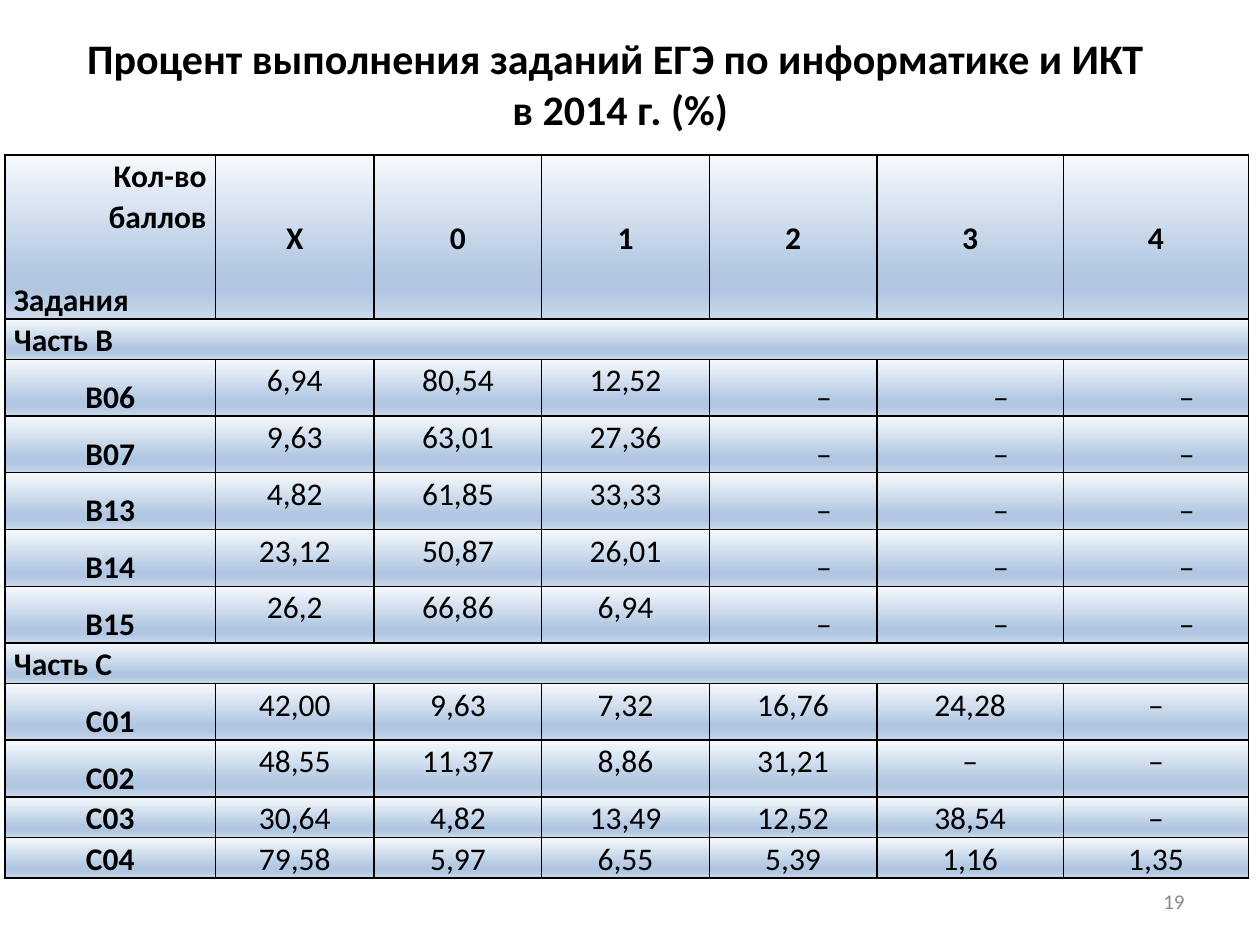
from lxml.etree import SubElement
from pptx import Presentation
from pptx.dml.color import RGBColor
from pptx.enum.text import MSO_ANCHOR as Anchor, PP_ALIGN as Align
from pptx.oxml.ns import qn
from pptx.util import Inches, Pt

BLACK = RGBColor(0x00, 0x00, 0x00)
GREY = RGBColor(0x89, 0x89, 0x89)
PALE = RGBColor(0xF6, 0xF9, 0xFC)
BLUE = RGBColor(0xB0, 0xC6, 0xE1)
LIGHT = RGBColor(0xCA, 0xD9, 0xEB)
GRADIENT = [(0, PALE), (74, BLUE), (83, BLUE), (100, LIGHT)]
FONT = "Calibri"

TITLE = "Процент выполнения заданий ЕГЭ по информатике и ИКТ\v в 2014 г. (%)"
PAGE_NUMBER = "19"
CORNER = ["Кол-во", "баллов", "Задания"]
SCORES = ["Х", "0", "1", "2", "3", "4"]
PARTS = [
    ("Часть В", [
        ("В06", "6,94", "80,54", "12,52", "–", "–", "–"),
        ("В07", "9,63", "63,01", "27,36", "–", "–", "–"),
        ("В13", "4,82", "61,85", "33,33", "–", "–", "–"),
        ("В14", "23,12", "50,87", "26,01", "–", "–", "–"),
        ("В15", "26,2", "66,86", "6,94", "–", "–", "–"),
    ]),
    ("Часть С", [
        ("С01", "42,00", "9,63", "7,32", "16,76", "24,28", "–"),
        ("С02", "48,55", "11,37", "8,86", "31,21", "–", "–"),
        ("С03", "30,64", "4,82", "13,49", "12,52", "38,54", "–"),
        ("С04", "79,58", "5,97", "6,55", "5,39", "1,16", "1,35"),
    ]),
]
COMPACT_TASKS = {"С03", "С04"}
COLUMN_WIDTHS = [1.67, 1.26, 1.33, 1.33, 1.33, 1.48, 1.47]
HEADER_HEIGHT, COMPACT_HEIGHT, TASK_HEIGHT = 1.3, 0.32, 0.45
SINGLE, WIDE = 1.07, 1.5
DASH_INDENT = Inches(0.49)
CORNER_GAP = Pt(23.5)


def format_paragraph(paragraph, size, color=BLACK, bold=False, align=Align.CENTER):
    paragraph.alignment = align
    for run in paragraph.runs:
        run.font.name, run.font.size = FONT, Pt(size)
        run.font.bold, run.font.color.rgb = bold, color


def add_color(parent, color):
    SubElement(SubElement(parent, qn("a:solidFill")), qn("a:srgbClr"), val=str(color))


def paint_cell(cell):
    properties = cell._tc.get_or_add_tcPr()
    for side in ("lnL", "lnR", "lnT", "lnB"):
        add_color(SubElement(properties, qn(f"a:{side}"), w=str(Pt(1))), BLACK)
    gradient = SubElement(properties, qn("a:gradFill"), rotWithShape="1")
    stops = SubElement(gradient, qn("a:gsLst"))
    for share, color in GRADIENT:
        stop = SubElement(stops, qn("a:gs"), pos=str(share * 1000))
        SubElement(stop, qn("a:srgbClr"), val=str(color))
    SubElement(gradient, qn("a:lin"), ang="5400000", scaled="0")


def fill_cell(cell, text, bold=False, align=Align.CENTER, spacing=SINGLE):
    cell.text_frame.text = text
    for paragraph in cell.text_frame.paragraphs:
        format_paragraph(paragraph, 18, bold=bold, align=align)
        paragraph.line_spacing = spacing


def add_text(slide, text, left, top, width, height, **style):
    frame = slide.shapes.add_textbox(*map(Inches, (left, top, width, height))).text_frame
    frame.word_wrap = True
    frame.text = text
    format_paragraph(frame.paragraphs[0], **style)
    return frame


def fill_header(table):
    corner = table.cell(0, 0)
    fill_cell(corner, "\n".join(CORNER), bold=True, align=Align.RIGHT)
    tasks_label = corner.text_frame.paragraphs[-1]
    tasks_label.alignment = Align.LEFT
    tasks_label.space_before = CORNER_GAP
    for column, score in enumerate(SCORES, 1):
        cell = table.cell(0, column)
        fill_cell(cell, score, bold=True)
        cell.vertical_anchor = Anchor.MIDDLE


def fill_task(table, row, task, part_index):
    for column, text in enumerate(task):
        cell = table.cell(row, column)
        indented = part_index == 0 and text == "–"
        tall_label = column == 0 and text not in COMPACT_TASKS
        fill_cell(cell, text, bold=column == 0,
                  spacing=WIDE if indented or tall_label else SINGLE)
        if indented:
            cell.text_frame.paragraphs[0]._p.get_or_add_pPr().set("indent", str(DASH_INDENT))


def add_results(slide):
    heights = [HEADER_HEIGHT]
    for _, tasks in PARTS:
        heights.append(COMPACT_HEIGHT)
        heights += [COMPACT_HEIGHT if task[0] in COMPACT_TASKS else TASK_HEIGHT
                    for task in tasks]
    table = slide.shapes.add_table(
        len(heights), len(COLUMN_WIDTHS), Inches(0.04), Inches(1.23),
        Inches(sum(COLUMN_WIDTHS)), Inches(sum(heights))).table
    table.first_row = table.horz_banding = False
    for column, width in zip(table.columns, COLUMN_WIDTHS):
        column.width = Inches(width)
    for row, height in zip(table.rows, heights):
        row.height = Inches(height)
    for cell in table.iter_cells():
        cell.margin_left = cell.margin_right = Inches(0.07)
        cell.margin_top = cell.margin_bottom = 0
        paint_cell(cell)

    fill_header(table)
    row = 1
    for part_index, (part, tasks) in enumerate(PARTS):
        table.cell(row, 0).merge(table.cell(row, len(COLUMN_WIDTHS) - 1))
        fill_cell(table.cell(row, 0), part, bold=True, align=Align.LEFT)
        for row, task in enumerate(tasks, row + 1):
            fill_task(table, row, task, part_index)
        row += 1


def main():
    deck = Presentation()
    deck.slide_width, deck.slide_height = Inches(10), Inches(7.5)
    slide = deck.slides.add_slide(deck.slide_layouts[6])
    number = add_text(slide, PAGE_NUMBER, 7.17, 6.95, 2.33, 0.4,
                      size=12, color=GREY, align=Align.RIGHT)
    number.vertical_anchor = Anchor.MIDDLE
    add_results(slide)
    add_text(slide, TITLE, 0.27, 0.21, 9.23, 0.91, size=24, bold=True)
    deck.save("out.pptx")


if __name__ == "__main__":
    main()
